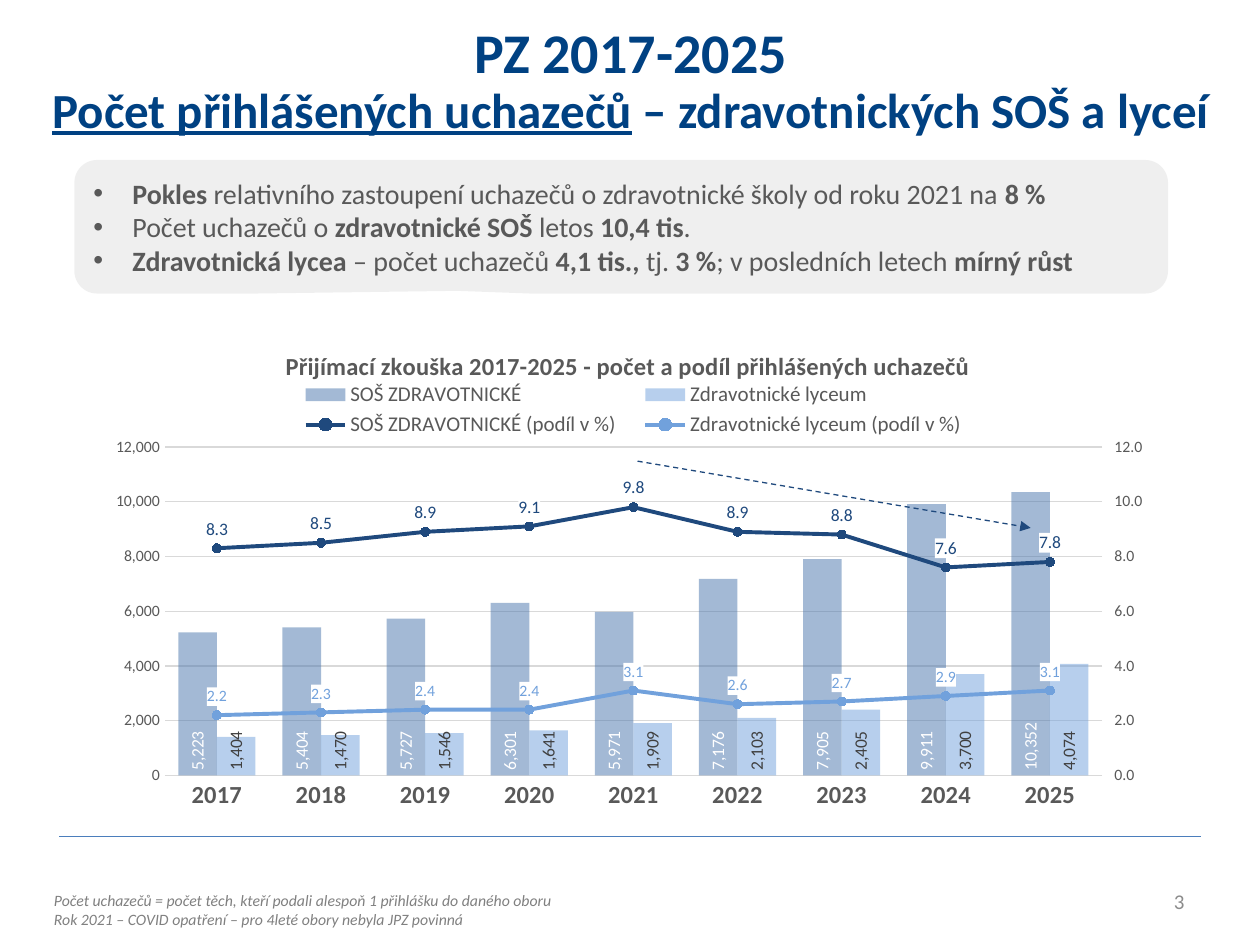
from copy import deepcopy
from lxml import etree
from pptx import Presentation
from pptx.chart.axis import ValueAxis
from pptx.chart.data import CategoryChartData
from pptx.dml.color import RGBColor
from pptx.enum.chart import (XL_CHART_TYPE, XL_LABEL_POSITION, XL_LEGEND_POSITION,
                             XL_MARKER_STYLE, XL_TICK_MARK)
from pptx.enum.dml import MSO_LINE
from pptx.enum.shapes import MSO_CONNECTOR, MSO_SHAPE
from pptx.enum.text import MSO_ANCHOR, PP_ALIGN
from pptx.oxml import parse_xml
from pptx.oxml.ns import nsdecls, qn
from pptx.util import Inches, Pt

FONT = "Calibri"
TITLE_BLUE, NAVY, STEEL, SKY, RULE_BLUE = map(
    RGBColor.from_string, ("004182", "1F497D", "4875AC", "71A1DC", "4B7EBC"))
DARK_GREY, TEXT_GREY, NOTE_GREY, NUMBER_GREY, LIGHT_GREY, WHITE = map(
    RGBColor.from_string, ("404040", "595959", "808080", "8C8C8C", "D9D9D9", "FFFFFF"))


def write(paragraph, text, size, color, **styles):
    run = paragraph.add_run()
    run.text = text
    for name, value in dict(styles, name=FONT, size=Pt(size)).items():
        setattr(run.font, name, value)
    run.font.color.rgb = color


def set_opacity(element, percent):
    """Make the first solid colour inside the element translucent."""
    color = next(element.iter(qn("a:srgbClr")))
    etree.SubElement(color, qn("a:alpha"), val=str(percent * 1000))


prs = Presentation()
prs.slide_width, prs.slide_height = Inches(10), Inches(7.5)
shapes = prs.slides.add_slide(prs.slide_layouts[6]).shapes

# Heading, footnote and page number
heading = shapes.add_textbox(Inches(0.23), Inches(0.12), Inches(9.55), Inches(1.06)).text_frame
footnote = shapes.add_textbox(Inches(0.33), Inches(7.02), Inches(7.88), Inches(0.4)).text_frame
page_number = shapes.add_textbox(Inches(7.17), Inches(6.95), Inches(2.33), Inches(0.4)).text_frame
for frame in (heading, footnote, page_number):
    frame.word_wrap = True
heading.vertical_anchor = page_number.vertical_anchor = MSO_ANCHOR.MIDDLE

exam, topic = heading.paragraphs[0], heading.add_paragraph()
for line in (exam, topic):
    line.alignment, line.line_spacing = PP_ALIGN.CENTER, 0.9
write(exam, "PZ 2017-2025", 32, TITLE_BLUE, bold=True)
write(topic, "Počet přihlášených uchazečů", 28, TITLE_BLUE, bold=True, underline=True)
write(topic, " – zdravotnických SOŠ a lyceí", 28, TITLE_BLUE, bold=True)

for line, text in zip((footnote.paragraphs[0], footnote.add_paragraph()), (
        "Počet uchazečů = počet těch, kteří podali alespoň 1 přihlášku do daného oboru",
        "Rok 2021 – COVID opatření – pro 4leté obory nebyla JPZ povinná")):
    line.alignment = PP_ALIGN.JUSTIFY
    write(line, text, 9, NOTE_GREY, italic=True)
page_number.paragraphs[0].alignment = PP_ALIGN.RIGHT
write(page_number.paragraphs[0], "3", 12, NUMBER_GREY)

# Key findings: (text, bold) runs per bullet
findings = [
    [("Pokles ", True),
     ("relativního zastoupení uchazečů o zdravotnické školy od roku 2021 na ", False),
     ("8 %", True)],
    [("Počet uchazečů o ", False), ("zdravotnické SOŠ ", True), ("letos ", False),
     ("10,4 tis", True), (".", False)],
    [("Zdravotnická lycea ", True), ("– počet uchazečů ", False), ("4,1 tis., ", True),
     ("tj. ", False), ("3 %", True), ("; v posledních letech ", False), ("mírný růst", True)],
]
callout = shapes.add_shape(MSO_SHAPE.ROUNDED_RECTANGULAR_CALLOUT,
                           Inches(0.59), Inches(1.27), Inches(8.68), Inches(1.06))
for index, value in enumerate((-0.15, 0.48, 0.17)):
    callout.adjustments[index] = value
callout.shadow.inherit = False
callout.fill.solid()
callout.fill.fore_color.rgb = LIGHT_GREY
set_opacity(callout.element, 40)
callout.line.fill.background()
callout.text_frame.word_wrap = True
callout.text_frame.vertical_anchor = MSO_ANCHOR.MIDDLE
for index, finding in enumerate(findings):
    bullet = callout.text_frame.add_paragraph() if index else callout.text_frame.paragraphs[0]
    bullet.alignment = PP_ALIGN.LEFT
    properties = bullet._p.get_or_add_pPr()
    properties.set("marL", str(Inches(0.31)))
    properties.set("indent", str(-Inches(0.31)))
    etree.SubElement(properties, qn("a:buFont"), typeface="Arial")
    etree.SubElement(properties, qn("a:buChar"), char="•")
    for text, bold in finding:
        write(bullet, text, 16, TEXT_GREY, bold=bold)

# Chart: counts as columns, shares as lines on the right axis
data = CategoryChartData()
data.categories = [str(year) for year in range(2017, 2026)]
data.add_series("SOŠ ZDRAVOTNICKÉ", (5223, 5404, 5727, 6301, 5971, 7176, 7905, 9911, 10352))
data.add_series("Zdravotnické lyceum", (1404, 1470, 1546, 1641, 1909, 2103, 2405, 3700, 4074))
data.add_series("SOŠ ZDRAVOTNICKÉ (podíl v %)", (8.3, 8.5, 8.9, 9.1, 9.8, 8.9, 8.8, 7.6, 7.8))
data.add_series("Zdravotnické lyceum (podíl v %)", (2.2, 2.3, 2.4, 2.4, 3.1, 2.6, 2.7, 2.9, 3.1))
chart = shapes.add_chart(XL_CHART_TYPE.COLUMN_CLUSTERED, Inches(0.71), Inches(2.6),
                         Inches(8.55), Inches(3.95), data).chart
chart.font.name, chart.font.size = FONT, Pt(10)
chart.font.color.rgb = TEXT_GREY
write(chart.chart_title.text_frame.paragraphs[0],
      "Přijímací zkouška 2017-2025 - počet a podíl přihlášených uchazečů", 14, TEXT_GREY, bold=True)
chart.has_legend = True
chart.legend.position = XL_LEGEND_POSITION.BOTTOM
chart.legend.include_in_layout = False
chart.legend.font.size = Pt(12)
bars = chart.plots[0]
bars.gap_width, bars.overlap, bars.vary_by_categories = 70, 0, False

years, counts = chart.category_axis, chart.value_axis
years.major_tick_mark = counts.major_tick_mark = XL_TICK_MARK.NONE
years.tick_labels.font.size, years.tick_labels.font.bold = Pt(14), True
counts.tick_labels.font.size = Pt(9)
counts.format.line.fill.background()
for line in (years.format.line, counts.major_gridlines.format.line):
    line.color.rgb, line.width = LIGHT_GREY, Pt(0.75)

right_years, right_counts = deepcopy(years._element), deepcopy(counts._element)
shares = ValueAxis(right_counts)
shares.has_major_gridlines = False
shares.major_tick_mark = XL_TICK_MARK.OUTSIDE
for axis, top, number_format in ((counts, 12000, "#,##0"), (shares, 12, "0.0")):
    axis.minimum_scale, axis.maximum_scale, axis.major_unit = 0, top, top / 6
    axis.tick_labels.number_format = number_format
    axis.tick_labels.number_format_is_linked = False
for element, settings in (
        (right_years, {"axId": "5001", "crossAx": "5002", "delete": "1"}),
        (right_counts, {"axId": "5002", "crossAx": "5001", "axPos": "r", "crosses": "max"})):
    for tag, value in settings.items():
        element.find(qn(f"c:{tag}")).set("val", value)

columns = bars._element
lines = parse_xml(
    f'<c:lineChart {nsdecls("c")}><c:grouping val="standard"/><c:varyColors val="0"/>'
    '<c:marker val="1"/><c:axId val="5001"/><c:axId val="5002"/></c:lineChart>')
for series in columns.findall(qn("c:ser"))[2:]:
    for column_only in series.findall(qn("c:invertIfNegative")):
        series.remove(column_only)
    lines.find(qn("c:marker")).addprevious(series)
columns.addnext(lines)
counts._element.addnext(right_years)
right_years.addnext(right_counts)

legend = chart.legend._element
for target, position, mode, box in (
        (columns.getparent(), 0, '<c:layoutTarget val="inner"/>', (0.075, 0.24, 0.867, 0.655)),
        (legend, 1, "", (0.18, 0.1, 0.65, 0.13))):
    sides = "".join(f'<c:{side} val="{value:.2f}"/>' for side, value in zip("xywh", box))
    for old_layout in target.findall(qn("c:layout")):
        target.remove(old_layout)
    target.insert(position, parse_xml(
        f'<c:layout {nsdecls("c")}><c:manualLayout>{mode}<c:xMode val="edge"/>'
        f'<c:yMode val="edge"/>{sides}</c:manualLayout></c:layout>'))

series_styles = ((STEEL, WHITE, 10), (SKY, DARK_GREY, 10), (NAVY, NAVY, 10), (SKY, SKY, 9))
all_series = [series for plot in chart.plots for series in plot.series]
for index, (series, (color, label_color, label_size)) in enumerate(zip(all_series, series_styles)):
    is_column = index < 2
    labels = series.data_labels
    labels.show_value = True
    labels.font.name, labels.font.size = FONT, Pt(label_size)
    labels.font.color.rgb = label_color
    labels.number_format = "#,##0" if is_column else "0.0"
    labels.number_format_is_linked = False
    label_text = labels._element.find(qn("c:txPr"))
    if is_column:
        series.format.fill.solid()
        series.format.fill.fore_color.rgb = color
        set_opacity(series._element, 50)
        labels.position = XL_LABEL_POSITION.INSIDE_BASE
        label_text.find(qn("a:bodyPr")).set("rot", "-5400000")
        label_text.find(qn("a:bodyPr")).set("vert", "horz")
    else:
        series.smooth = False
        series.format.line.color.rgb, series.format.line.width = color, Pt(2.25)
        series.marker.style, series.marker.size = XL_MARKER_STYLE.CIRCLE, 5
        series.marker.format.fill.solid()
        series.marker.format.fill.fore_color.rgb = series.marker.format.line.color.rgb = color
        labels.position = XL_LABEL_POSITION.ABOVE
        label_text.addprevious(parse_xml(f'<c:spPr {nsdecls("c", "a")}><a:solidFill>'
                                         f'<a:srgbClr val="{WHITE}"/></a:solidFill></c:spPr>'))

# Footer rule and trend arrow
for color, *ends in ((RULE_BLUE, 0.47, 6.64, 9.53, 6.64), (NAVY, 5.06, 3.66, 8.18, 4.19)):
    connector = shapes.add_connector(MSO_CONNECTOR.STRAIGHT, *map(Inches, ends))
    connector.line.color.rgb, connector.line.width = color, Pt(0.75)
    etree.SubElement(connector.element.spPr, qn("a:effectLst"))
    if color == NAVY:
        connector.line.dash_style = MSO_LINE.DASH
        etree.SubElement(connector.line._get_or_add_ln(), qn("a:tailEnd"), type="triangle")
prs.save("out.pptx")
